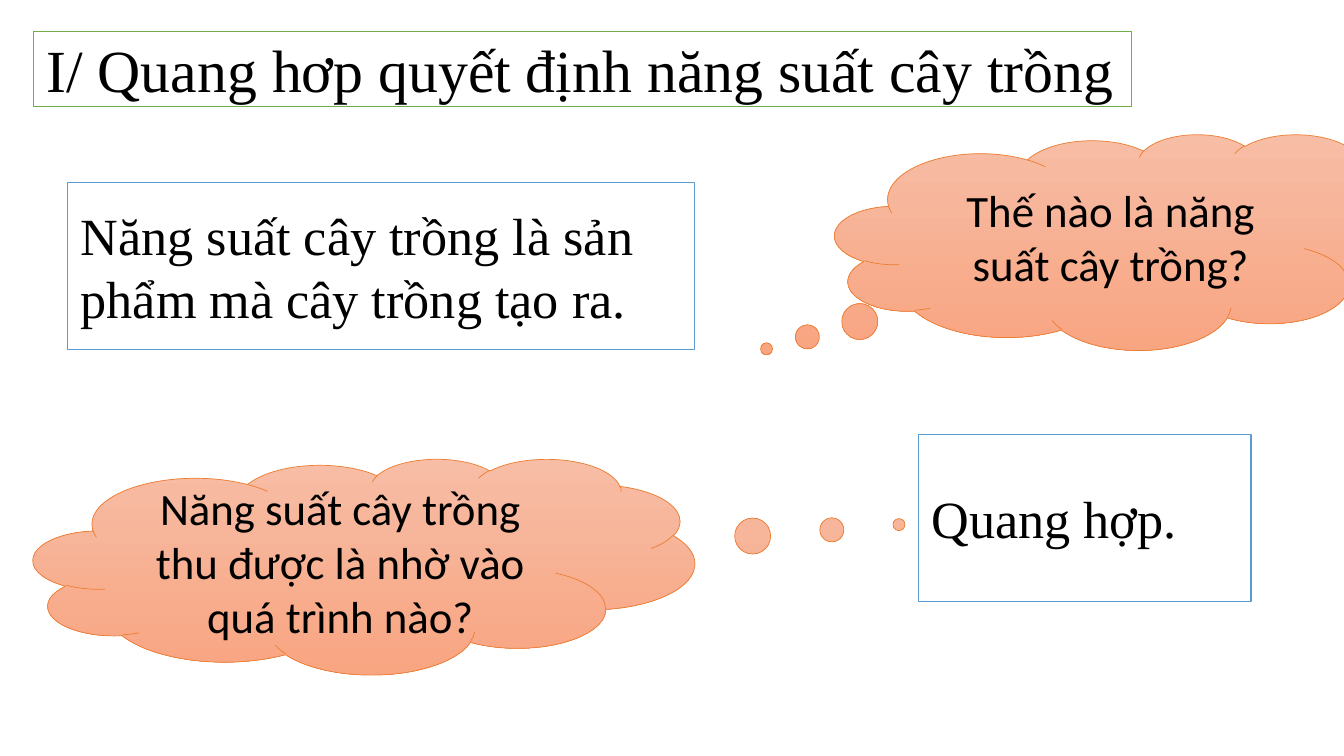
from dataclasses import dataclass

from pptx import Presentation
from pptx.dml.color import RGBColor
from pptx.enum.shapes import MSO_SHAPE
from pptx.enum.text import MSO_ANCHOR, MSO_AUTO_SIZE, PP_ALIGN
from pptx.shapes.autoshape import Shape
from pptx.slide import Slide
from pptx.util import Inches, Pt

RECTANGLE = MSO_SHAPE.RECTANGLE
CLOUD = MSO_SHAPE.CLOUD_CALLOUT
MIDDLE = MSO_ANCHOR.MIDDLE
NO_AUTOFIT = MSO_AUTO_SIZE.NONE
LEFT, CENTER = PP_ALIGN.LEFT, PP_ALIGN.CENTER

TITLE_ONLY_LAYOUT = 5
SERIF, SANS = "Times New Roman", "Calibri"
COLORS = {
    "white": "FFFFFF",
    "text": "000000",
    "title_line": "70AD47",
    "answer_line": "5B9BD5",
    "cloud_line": "ED7D31",
    "cloud_top": "F7BDA5",
    "cloud_bottom": "F8A582",
}


@dataclass(frozen=True)
class Box:
    text: str
    left: float
    top: float
    width: float
    height: float


@dataclass(frozen=True)
class Question(Box):
    tail_x: float
    tail_y: float


TITLE = Box("I/ Quang hơp quyết định năng suất cây trồng", 0.33, 0.31, 10.89, 0.75)
QUESTIONS = [
    Question("Thế nào là năng suất cây trồng?", 8.28, 1.33, 5.89, 2.14, -0.615, 0.496),
    Question("Năng suất cây trồng thu được là nhờ vào quá trình nào?",
             0.33, 4.55, 6.56, 2.14, 0.809, -0.194),
]
ANSWERS = [
    Box("Năng suất cây trồng là sản phẩm mà cây trồng tạo ra.", 0.67, 1.81, 6.22, 1.66),
    Box("Quang hợp.", 9.11, 4.31, 3.3, 1.66),
]


def color(name: str) -> RGBColor:
    return RGBColor.from_string(COLORS[name])


def write_text(shape: Shape, text: str, font_name: str, size: float,
               alignment: PP_ALIGN, margin_x: float, margin_y: float) -> None:
    frame = shape.text_frame
    frame.text = text
    frame.word_wrap = True
    frame.auto_size = NO_AUTOFIT
    frame.vertical_anchor = MIDDLE
    frame.margin_left = frame.margin_right = Inches(margin_x)
    frame.margin_top = frame.margin_bottom = Inches(margin_y)
    paragraph = frame.paragraphs[0]
    paragraph.alignment = alignment
    paragraph.font.name = font_name
    paragraph.font.size = Pt(size)
    paragraph.font.color.rgb = color("text")


def set_line(shape: Shape, color_name: str, width: float) -> None:
    shape.line.color.rgb = color(color_name)
    shape.line.width = Pt(width)


def format_panel(shape: Shape, text: str, size: float, line_color: str) -> None:
    """Style a white outlined panel with left-aligned serif text."""
    shape.fill.solid()
    shape.fill.fore_color.rgb = color("white")
    set_line(shape, line_color, 1)
    write_text(shape, text, SERIF, size, LEFT, 0.13, 0.07)


def add_box(slide: Slide, kind: MSO_SHAPE, box: Box) -> Shape:
    shape = slide.shapes.add_shape(kind, Inches(box.left), Inches(box.top),
                                   Inches(box.width), Inches(box.height))
    shape.shadow.inherit = False
    return shape


def add_title(slide: Slide, box: Box) -> None:
    title = slide.shapes.title
    title.left, title.top = Inches(box.left), Inches(box.top)
    title.width, title.height = Inches(box.width), Inches(box.height)
    format_panel(title, box.text, 42.7, "title_line")


def add_answer(slide: Slide, answer: Box) -> None:
    format_panel(add_box(slide, RECTANGLE, answer), answer.text, 37.3, "answer_line")


def add_question(slide: Slide, question: Question) -> None:
    cloud = add_box(slide, CLOUD, question)
    cloud.adjustments[0] = question.tail_x
    cloud.adjustments[1] = question.tail_y
    cloud.fill.gradient()
    cloud.fill.gradient_angle = 270  # counter-clockwise, so top to bottom
    for stop, name in zip(cloud.fill.gradient_stops, ("cloud_top", "cloud_bottom")):
        stop.color.rgb = color(name)
    set_line(cloud, "cloud_line", 0.5)
    write_text(cloud, question.text, SANS, 32, CENTER, 0.1, 0.05)


def main() -> None:
    presentation = Presentation()
    presentation.slide_width = Inches(13.33)
    presentation.slide_height = Inches(7.5)
    slide = presentation.slides.add_slide(presentation.slide_layouts[TITLE_ONLY_LAYOUT])

    # Heading
    add_title(slide, TITLE)

    # Question clouds, each with its answer panel
    for question, answer in zip(QUESTIONS, ANSWERS):
        add_question(slide, question)
        add_answer(slide, answer)

    presentation.save("out.pptx")


if __name__ == "__main__":
    main()
